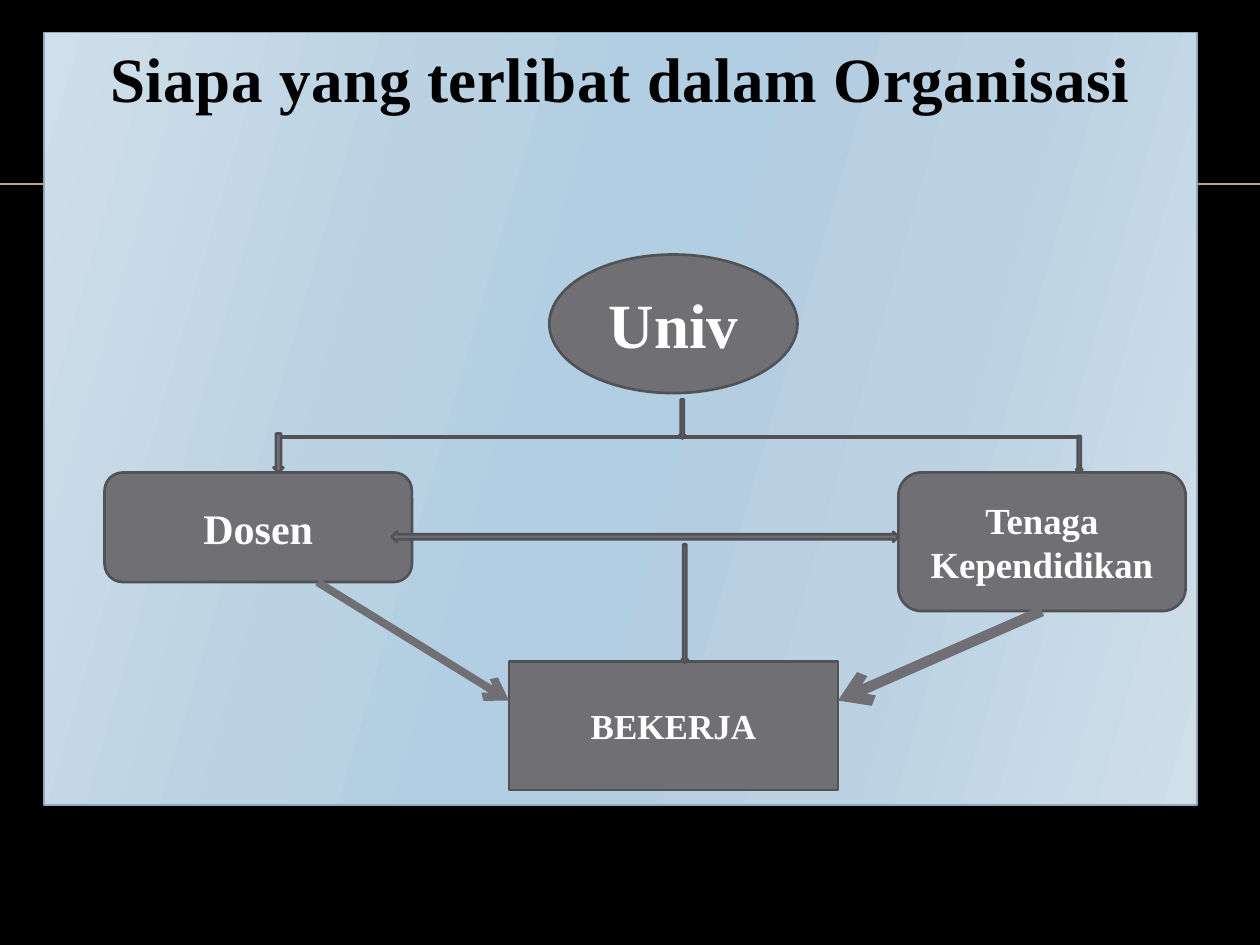
from lxml import etree
from pptx import Presentation
from pptx.dml.color import RGBColor
from pptx.enum.shapes import MSO_CONNECTOR, MSO_SHAPE
from pptx.enum.text import MSO_ANCHOR, MSO_AUTO_SIZE, PP_ALIGN
from pptx.oxml import parse_xml
from pptx.oxml.ns import nsdecls, qn
from pptx.util import Inches, Pt

BLACK = RGBColor(0, 0, 0)
WHITE = RGBColor(255, 255, 255)
GREY = RGBColor(0x6F, 0x6F, 0x74)
EDGE = RGBColor(0x52, 0x52, 0x56)
TAN = RGBColor(0xBB, 0xAA, 0x8A)
RIM = RGBColor(0x92, 0xA9, 0xB9)
PALE = RGBColor(0xD0, 0xDF, 0xEA)
SOFT = RGBColor(0xBB, 0xD2, 0xE3)
BLUE = RGBColor(0xB2, 0xCE, 0xE2)
HAZE = RGBColor(0xB4, 0xCD, 0xE0)
FONT = "Times New Roman"

deck = Presentation()
deck.slide_width, deck.slide_height = Inches(10), Inches(7.5)
slide = deck.slides.add_slide(deck.slide_layouts[5])
slide.background.fill.solid()
slide.background.fill.fore_color.rgb = BLACK
shapes = slide.shapes


def set_text(shape, text, size, color, anchor):
    frame = shape.text_frame
    frame.text = text
    frame.word_wrap = True
    frame.vertical_anchor = anchor
    para = frame.paragraphs[0]
    para.alignment = PP_ALIGN.CENTER
    font = para.runs[0].font
    font.name, font.size, font.bold = FONT, Pt(size), True
    font.color.rgb = color


def add_line(start, end, color, width):
    line = shapes.add_connector(
        MSO_CONNECTOR.STRAIGHT, *[Inches(v) for v in start + end])
    line.line.color.rgb = color
    line.line.width = Pt(width)
    etree.SubElement(line.element.spPr, qn("a:effectLst"))
    return line


# Title panel with its gradient
title = shapes.title
title.left, title.top = Inches(0.35), Inches(0.26)
title.width, title.height = Inches(9.15), Inches(6.13)
set_text(title, "Siapa yang terlibat dalam Organisasi", 36, BLACK, MSO_ANCHOR.TOP)
title.text_frame.auto_size = MSO_AUTO_SIZE.NONE
head = title.text_frame.paragraphs[0]
head.space_before = Pt(6)
head.runs[0].font._element.set("spc", "30")
title.line.color.rgb = RIM
title.line.width = Pt(0.75)
stops = [(0, PALE), (30, SOFT), (45, BLUE), (55, HAZE), (73, SOFT), (100, PALE)]
marks = "".join(
    f'<a:gs pos="{pos * 1000}"><a:srgbClr val="{color}"/></a:gs>'
    for pos, color in stops)
title.element.spPr.find(qn("a:ln")).addprevious(parse_xml(
    f'<a:gradFill {nsdecls("a")} rotWithShape="1"><a:gsLst>{marks}</a:gsLst>'
    f'<a:lin ang="{16 * 60000}" scaled="0"/></a:gradFill>'))

# Rule behind the panel
rule = add_line((0, 1.46), (10, 1.46), TAN, 1)
title.element.addprevious(rule.element)

# Labelled nodes, then the thin bars and block arrows between them
parts = [
    (MSO_SHAPE.OVAL, 4.36, 2.02, 1.97, 1.1, "Univ", 36),
    (MSO_SHAPE.ROUNDED_RECTANGLE, 0.83, 3.75, 2.44, 0.87, "Dosen", 24),
    (MSO_SHAPE.ROUNDED_RECTANGLE, 7.13, 3.75, 2.28, 1.1, "Tenaga Kependidikan", 21),
    (MSO_SHAPE.RECTANGLE, 4.04, 5.25, 2.61, 1.02, "BEKERJA", 20),
    (MSO_SHAPE.MATH_MINUS, 1.06, 3.44, 8.66, 0.05, "", 0),
    (MSO_SHAPE.DOWN_ARROW, 8.54, 3.46, 0.05, 0.29, "", 0),
    (MSO_SHAPE.DOWN_ARROW, 2.17, 3.44, 0.08, 0.31, "", 0),
    (MSO_SHAPE.DOWN_ARROW, 5.39, 3.17, 0.05, 0.31, "", 0),
    (MSO_SHAPE.LEFT_RIGHT_ARROW, 3.11, 4.22, 4.02, 0.08, "", 0),
    (MSO_SHAPE.DOWN_ARROW, 5.41, 4.32, 0.05, 0.94, "", 0),
]
for kind, left, top, width, height, text, size in parts:
    part = shapes.add_shape(
        kind, Inches(left), Inches(top), Inches(width), Inches(height))
    part.shadow.inherit = False
    part.fill.solid()
    part.fill.fore_color.rgb = GREY
    part.line.color.rgb = EDGE
    part.line.width = Pt(1.5)
    if text:
        set_text(part, text, size, WHITE, MSO_ANCHOR.MIDDLE)

# Slanted arrows to the bottom box
for start, end, width in [((8.27, 4.85), (6.65, 5.56), 6),
                          ((2.52, 4.62), (4.04, 5.56), 4.5)]:
    arrow = add_line(start, end, GREY, width)
    etree.SubElement(arrow.line._get_or_add_ln(), qn("a:tailEnd"), type="arrow")

deck.save("out.pptx")
